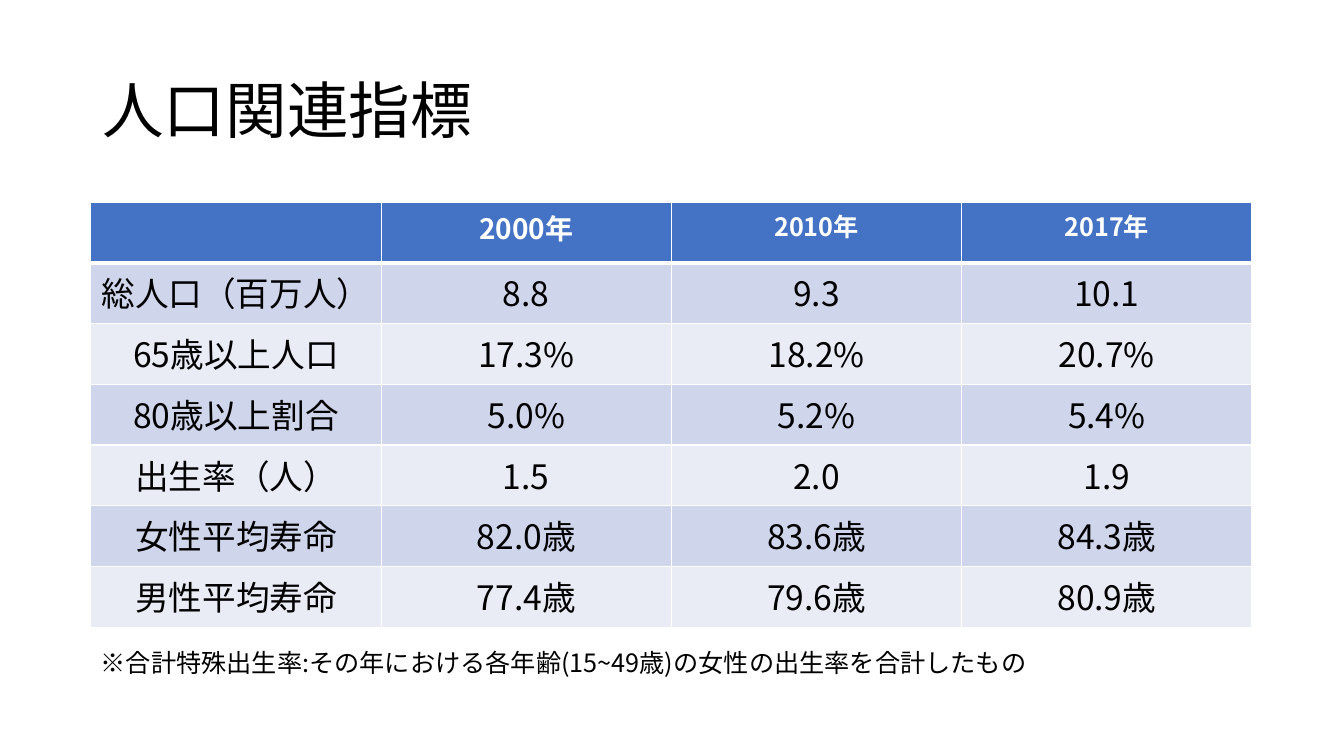
from lxml import etree
from pptx import Presentation
from pptx.dml.color import RGBColor
from pptx.enum.lang import MSO_LANGUAGE_ID
from pptx.enum.text import MSO_ANCHOR, PP_ALIGN
from pptx.oxml.ns import qn
from pptx.util import Cm, Pt

CENTER = PP_ALIGN.CENTER
TOP, MIDDLE = MSO_ANCHOR.TOP, MSO_ANCHOR.MIDDLE
JAPANESE = MSO_LANGUAGE_ID.JAPANESE
FONT = "Noto Sans CJK JP"
BLACK, WHITE, HEADER_BLUE = "000000", "FFFFFF", "4472C4"
BANDS = ["CFD5EA", "E9EBF5"]

YEARS = [("", 18), ("2000年", 20), ("2010年", 18), ("2017年", 18)]
INDICATORS = [
    ["総人口（百万人）", "8.8", "9.3", "10.1"],
    ["65歳以上人口", "17.3%", "18.2%", "20.7%"],
    ["80歳以上割合", "5.0%", "5.2%", "5.4%"],
    ["出生率（人）", "1.5", "2.0", "1.9"],
    ["女性平均寿命", "82.0歳", "83.6歳", "84.3歳"],
    ["男性平均寿命", "77.4歳", "79.6歳", "80.9歳"],
]


def color(value):
    """Turn a hex string into a colour."""
    return RGBColor.from_string(value)


def add_run(paragraph, text, size, text_color=BLACK, bold=False):
    """Add one formatted run to a paragraph."""
    run = paragraph.add_run()
    run.text = text
    font = run.font
    font.size, font.bold, font.name = Pt(size), bold, FONT
    font.language_id = JAPANESE
    font.color.rgb = color(text_color)
    etree.SubElement(run._r.get_or_add_rPr(), qn("a:ea"), typeface=FONT)


def add_text(slide, box, text, size, anchor=TOP, line_spacing=1.0):
    """Place a line of text in a box given as left, top, width, height in cm."""
    frame = slide.shapes.add_textbox(*map(Cm, box)).text_frame
    frame.word_wrap = True
    frame.vertical_anchor = anchor
    paragraph = frame.paragraphs[0]
    paragraph.line_spacing = line_spacing
    add_run(paragraph, text, size)


def set_borders(cell, widths):
    """Draw white borders with widths in points for left, right, top, bottom."""
    properties = cell._tc.get_or_add_tcPr()
    for index, (side, width) in enumerate(zip("LRTB", widths)):
        line = etree.Element(qn(f"a:ln{side}"), w=str(Pt(width)))
        fill = etree.SubElement(line, qn("a:solidFill"))
        etree.SubElement(fill, qn("a:srgbClr"), val=WHITE)
        properties.insert(index, line)


def fill_cell(cell, text, size, fill, text_color, bold, widths):
    """Write, fill and outline one table cell."""
    cell.fill.solid()
    cell.fill.fore_color.rgb = color(fill)
    set_borders(cell, widths)
    paragraph = cell.text_frame.paragraphs[0]
    paragraph.alignment = CENTER
    if text:
        add_run(paragraph, text, size, text_color, bold)


def add_indicator_table(slide, box):
    """Place the table of indicators by year in a box given in cm."""
    row_count, column_count = len(INDICATORS) + 1, len(YEARS)
    table = slide.shapes.add_table(row_count, column_count, *map(Cm, box)).table
    for column in table.columns:
        column.width = Cm(box[2] / column_count)
    for row in table.rows:
        row.height = Cm(box[3] / row_count)
    for column, (year, size) in enumerate(YEARS):
        fill_cell(table.cell(0, column), year, size, HEADER_BLUE, WHITE, True, (1, 1, 1, 3))
    for row, values in enumerate(INDICATORS, 1):
        band = BANDS[(row - 1) % 2]
        widths = (1, 1, 3 if row == 1 else 1, 1)
        for column, value in enumerate(values):
            fill_cell(table.cell(row, column), value, 24, band, BLACK, False, widths)


def build_slide(presentation):
    """Build the slide of population indicators."""
    slide = presentation.slides.add_slide(presentation.slide_layouts[6])
    add_text(slide, (2.33, 1.01, 29.21, 3.68), "人口関連指標", 44, MIDDLE, 0.9)
    add_indicator_table(slide, (2.29, 5.09, 29.26, 10.72))
    note = "※合計特殊出生率:その年における各年齢(15~49歳)の女性の出生率を合計したもの"
    add_text(slide, (2.29, 16.18, 25.02, 1.02), note, 18)


def main():
    """Create and save the presentation."""
    presentation = Presentation()
    presentation.slide_width, presentation.slide_height = Cm(33.87), Cm(19.05)
    build_slide(presentation)
    presentation.save("out.pptx")


if __name__ == "__main__":
    main()
